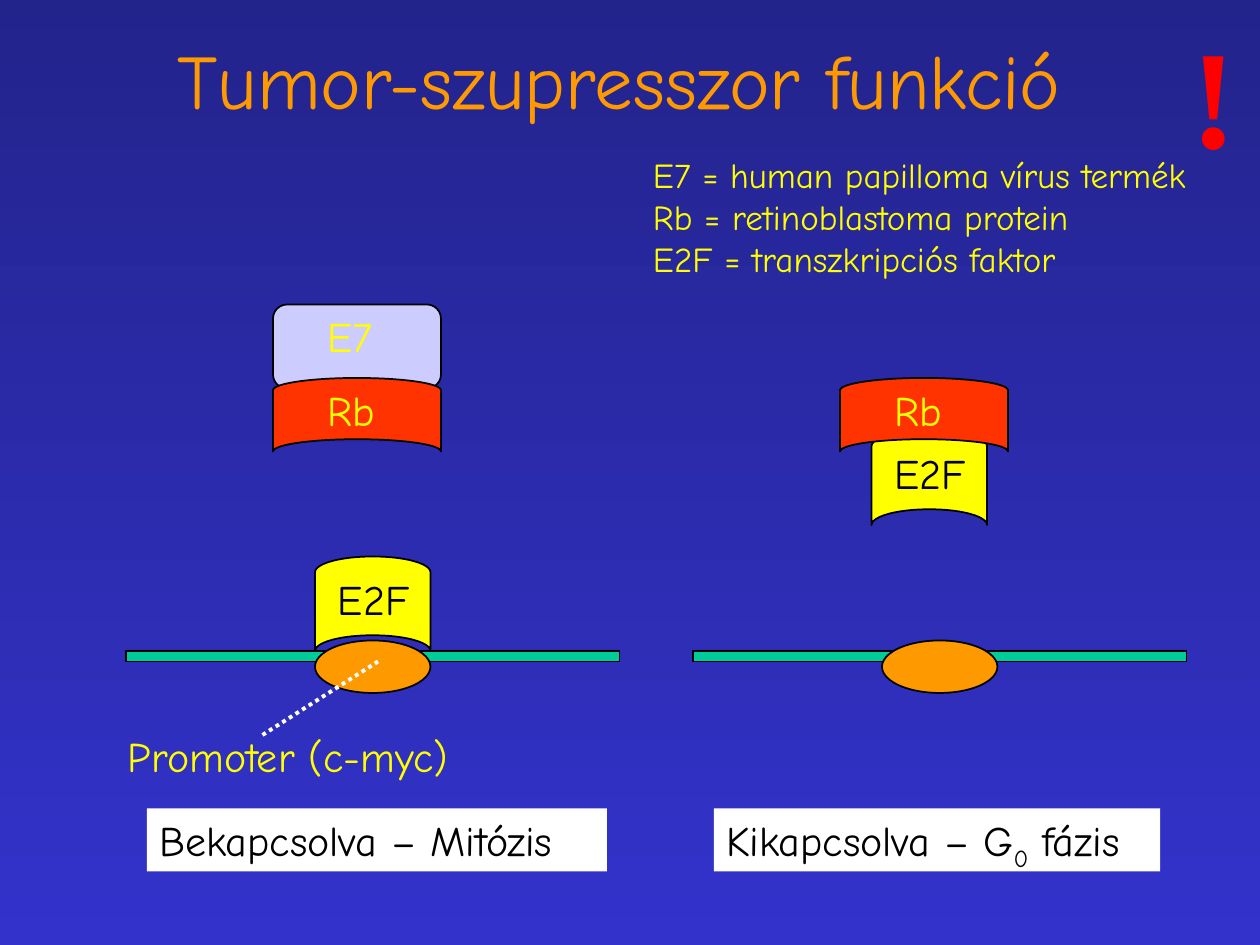
import dataclasses

import pptx
import pptx.dml.color
import pptx.enum.dml
import pptx.enum.shapes
import pptx.enum.text
import pptx.oxml
import pptx.oxml.ns
import pptx.util

SCALE = 7620
KIND = pptx.enum.shapes.MSO_SHAPE


@dataclasses.dataclass(frozen=True)
class Theme:
    """Hold the colours, fonts and type sizes."""
    top: str = "23238C"
    base: str = "3333CC"
    orange: str = "FF9900"
    yellow: str = "FFFF00"
    red: str = "FF3300"
    alert: str = "FF0000"
    green: str = "00CC99"
    lilac: str = "CCCCFF"
    black: str = "000000"
    white: str = "FFFFFF"
    font: str = "Comic Neue"
    serif: str = "Times New Roman"
    head: int = 44
    body: int = 24
    small: int = 20
    mark: int = 80


THEME = Theme()


def px(*vals):
    """Turn px into EMU."""
    return [pptx.util.Emu(val * SCALE) for val in vals]


def tint(code):
    """Make a colour from its hex code."""
    return pptx.dml.color.RGBColor.from_string(code)


def style(frame, color, size, font=THEME.font, bold=False):
    """Format every run in a text frame."""
    for para in frame.paragraphs:
        for run in para.runs:
            run.font.name = font
            run.font.size = pptx.util.Pt(size)
            run.font.bold = bold
            run.font.color.rgb = tint(color)


def paint(slide):
    """Fill the background with a downward gradient."""
    fill = slide.background.fill
    fill.gradient()
    fill.gradient_angle = 270
    for stop, color in zip(fill.gradient_stops, (THEME.top, THEME.base)):
        stop.color.rgb = tint(color)


def title(slide, text, box):
    """Place and format the title."""
    shape = slide.shapes.title
    shape.left, shape.top, shape.width, shape.height = px(*box)
    frame = shape.text_frame
    frame.text = text
    frame.vertical_anchor = pptx.enum.text.MSO_ANCHOR.MIDDLE
    frame.paragraphs[0].alignment = pptx.enum.text.PP_ALIGN.CENTER
    style(frame, THEME.head and THEME.orange, THEME.head)


def block(slide, kind, box, color, turn=0):
    """Draw a filled shape with a thin black line."""
    shape = slide.shapes.add_shape(kind, *px(*box))
    shape.shadow.inherit = False
    shape.rotation = turn
    shape.fill.solid()
    shape.fill.fore_color.rgb = tint(color)
    shape.line.color.rgb = tint(THEME.black)
    shape.line.width = pptx.util.Pt(1)


def label(slide, text, box, color=THEME.yellow, size=THEME.body, **look):
    """Write text that does not wrap."""
    shape = slide.shapes.add_textbox(*px(*box))
    frame = shape.text_frame
    frame.text = text
    frame.word_wrap = False
    frame.auto_size = pptx.enum.text.MSO_AUTO_SIZE.SHAPE_TO_FIT_TEXT
    style(frame, color, size, **look)
    return shape


def state(slide, left, width, text, sub="", tail=""):
    """Write a caption on white, with an optional subscript."""
    shape = label(slide, text, (left, 770, width, 60), THEME.black)
    shape.fill.solid()
    shape.fill.fore_color.rgb = tint(THEME.white)
    if sub:
        para = shape.text_frame.paragraphs[0]
        low, rest = para.add_run(), para.add_run()
        low.text, rest.text = sub, tail
        style(shape.text_frame, THEME.black, THEME.body)
        low.font._element.set("baseline", "-25000")


def gene(slide, left):
    """Draw the DNA strand and its promoter."""
    block(slide, KIND.RECTANGLE, (left, 620, 470, 10), THEME.green)
    block(slide, KIND.OVAL, (left + 180, 610, 110, 50), THEME.orange)


def factor(slide, left, top):
    """Draw the E2F factor."""
    block(slide, KIND.FLOWCHART_STORED_DATA, (left, top, 90, 110),
          THEME.yellow, 90)
    label(slide, "E2F", (left, top + 20, 98, 60), THEME.black)


def protein(slide, left):
    """Draw the Rb protein."""
    block(slide, KIND.FLOWCHART_STORED_DATA, (left + 5, 315, 70, 160),
          THEME.red, 90)
    label(slide, "Rb", (left, 360, 73, 60))


def pointer(slide, *ends):
    """Draw a dotted white line."""
    line = slide.shapes.add_connector(
        pptx.enum.shapes.MSO_CONNECTOR.STRAIGHT, *px(*ends))
    line.line.color.rgb = tint(THEME.white)
    line.line.width = pptx.util.Pt(2.25)
    line.line.dash_style = pptx.enum.dml.MSO_LINE.ROUND_DOT
    line._element.spPr.append(pptx.oxml.parse_xml(
        "<a:effectLst %s/>" % pptx.oxml.ns.nsdecls("a")))


def main():
    """Build the slide and save it."""
    deck = pptx.Presentation()
    deck.slide_width, deck.slide_height = px(1200, 900)
    slide = deck.slides.add_slide(deck.slide_layouts[5])
    paint(slide)
    title(slide, "Tumor-szupresszor funkció", (80, 0, 1020, 150))

    block(slide, KIND.ROUNDED_RECTANGLE, (260, 290, 160, 80), THEME.lilac)
    gene(slide, 120)
    factor(slide, 310, 520)
    protein(slide, 300)
    label(slide, "E7", (300, 290, 73, 60))
    label(slide, "Promoter (c-myc)", (110, 690, 348, 60))
    pointer(slide, 250, 700, 360, 630)
    state(slide, 140, 438, "Bekapcsolva – Mitózis")

    gene(slide, 660)
    factor(slide, 840, 400)
    protein(slide, 840)
    state(slide, 680, 425, "Kikapcsolva – G", "0", " fázis")

    label(slide, "E7 = human papilloma vírus termék\n"
          "Rb = retinoblastoma protein\n"
          "E2F = transzkripciós faktor",
          (610, 140, 558, 132), size=THEME.small)
    label(slide, "!", (1122, 2, 70, 174), THEME.alert, THEME.mark,
          font=THEME.serif, bold=True)
    deck.save("out.pptx")


if __name__ == "__main__":
    main()
